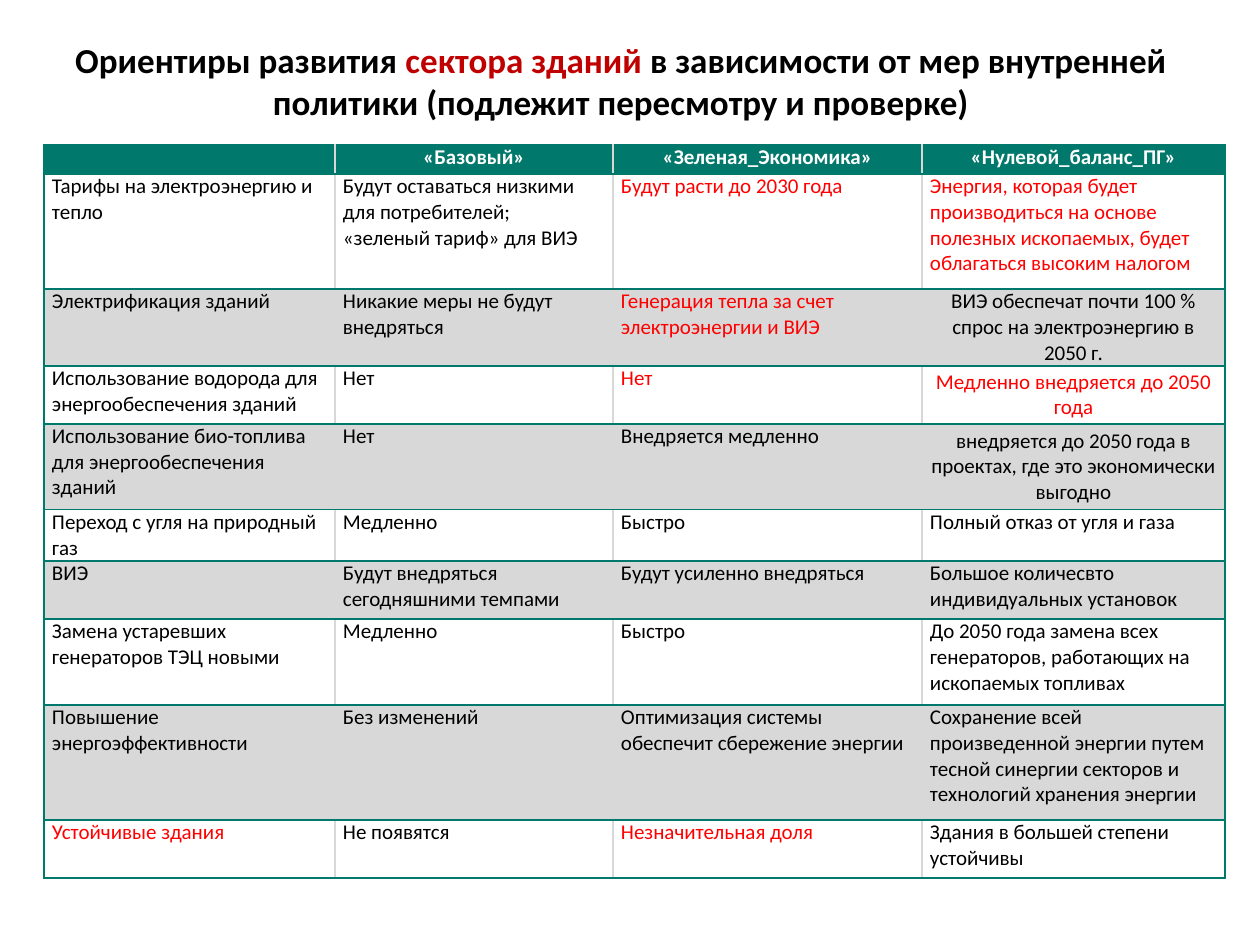
"""Build a slide comparing building-sector policy scenarios."""
from dataclasses import dataclass

from lxml import etree
from pptx import Presentation
from pptx import util as u
from pptx.dml.color import RGBColor
from pptx.enum import text
from pptx.oxml.ns import qn

PX = u.Inches(1) / 126


@dataclass(frozen=True)
class Theme:
    """Colours, font and type sizes of the slide."""
    font: str = "Calibri"
    title_size: int = 20
    table_size: int = 12
    ink: str = "000000"
    white: str = "FFFFFF"
    accent: str = "C00000"
    red: str = "FF0000"
    green: str = "00786B"
    grey: str = "D8D8D8"


THEME = Theme()


@dataclass(frozen=True)
class Entry:
    """Wording of a table cell with its colour and alignment."""
    wording: str
    color: str = THEME.ink
    centred: bool = False


def px(length):
    """Turn pixels into EMU."""
    return u.Emu(round(length * PX))


def write(frame, pieces, *, size, bold=False, centred=False, spacing=0, middle=False):
    """Fill a text frame with one paragraph of (wording, colour) pieces."""
    frame.word_wrap = True
    frame.vertical_anchor = text.MSO_ANCHOR.MIDDLE if middle else text.MSO_ANCHOR.TOP
    paragraph = frame.paragraphs[0]
    paragraph.alignment = text.PP_ALIGN.CENTER if centred else text.PP_ALIGN.LEFT
    paragraph.space_before = paragraph.space_after = u.Pt(spacing)
    for wording, color in pieces:
        for number, line in enumerate(wording.split("\n")):
            if number:
                paragraph.add_line_break()
            run = paragraph.add_run()
            run.text = line
            run.font.name = THEME.font
            run.font.size = u.Pt(size)
            run.font.bold = bold
            run.font.color.rgb = RGBColor.from_string(color)
    paragraph._p.get_or_add_endParaRPr().set("sz", str(size * 100))


class SlideBuilder:
    """Hold the theme and the current slide."""

    def __init__(self, slide, theme):
        """Keep the slide and its theme."""
        self.slide, self.theme = slide, theme

    def title(self, box, pieces):
        """Place and fill the title placeholder."""
        heading = self.slide.shapes.title
        heading.left, heading.top, heading.width, heading.height = map(px, box)
        write(heading.text_frame, pieces, size=self.theme.title_size,
              bold=True, centred=True, middle=True)
        heading.text_frame.auto_size = text.MSO_AUTO_SIZE.NONE

    def borders(self, cell, colors):
        """Draw the left, right, top and bottom borders of a cell."""
        properties = cell._tc.get_or_add_tcPr()
        for position, (side, color) in enumerate(zip("LRTB", colors)):
            line = etree.Element(qn(f"a:ln{side}"), w=str(u.Pt(1)))
            fill = etree.SubElement(line, qn("a:solidFill"))
            etree.SubElement(fill, qn("a:srgbClr"), val=color)
            properties.insert(position, line)

    def cell(self, cell, entry, *, header, fill, edges):
        """Fill and format one table cell."""
        cell.margin_left = cell.margin_right = px(8)
        cell.margin_top = cell.margin_bottom = 0
        pieces = [(entry.wording, entry.color)] if entry.wording else []
        write(cell.text_frame, pieces, size=self.theme.table_size, bold=header,
              centred=header or entry.centred, spacing=3)
        if entry.centred:
            cell.vertical_anchor = text.MSO_ANCHOR.MIDDLE
        if fill:
            cell.fill.solid()
            cell.fill.fore_color.rgb = RGBColor.from_string(fill)
        else:
            cell.fill.background()
        self.borders(cell, edges)

    def table(self, left, top, widths, heights, entries):
        """Add a table with a green header and grey bands."""
        theme = self.theme
        table = self.slide.shapes.add_table(
            len(heights), len(widths), px(left), px(top),
            px(sum(widths)), px(sum(heights))).table
        table.horz_banding = table.first_row = False
        for column, width in zip(table.columns, widths):
            column.width = px(width)
        for r, (height, row) in enumerate(zip(heights, entries)):
            table.rows[r].height = px(height)
            fill = theme.green if r == 0 else None if r % 2 else theme.grey
            for c, entry in enumerate(row):
                outer_left = theme.green if c == 0 else theme.grey
                outer_right = theme.green if c == len(widths) - 1 else theme.grey
                self.cell(table.cell(r, c), entry, header=r == 0, fill=fill,
                          edges=(outer_left, outer_right, theme.green, theme.green))


def plain(wording):
    """Make a black entry."""
    return Entry(wording)


def red(wording, centred=False):
    """Make a red entry."""
    return Entry(wording, THEME.red, centred)


def middle(wording):
    """Make a black centred entry."""
    return Entry(wording, centred=True)


TITLE = [
    ("Ориентиры развития ", THEME.ink),
    ("сектора зданий ", THEME.accent),
    ("в зависимости от мер внутренней политики (подлежит пересмотру и проверке)", THEME.ink),
]
SCENARIOS = [Entry(name, THEME.white) for name in
             ("", "«Базовый»", "«Зеленая_Экономика»", "«Нулевой_баланс_ПГ»")]
MEASURES = [
    [plain("Тарифы на электроэнергию и тепло"),
     plain("Будут оставаться низкими для потребителей;\n«зеленый тариф» для ВИЭ"),
     red("Будут расти до 2030 года"),
     red("Энергия, которая будет производиться на основе полезных ископаемых, "
         "будет облагаться высоким налогом")],
    [plain("Электрификация зданий"), plain("Никакие меры не будут внедряться"),
     red("Генерация тепла за счет электроэнергии и ВИЭ"),
     middle("ВИЭ обеспечат почти 100 % спрос на электроэнергию в 2050 г.")],
    [plain("Использование водорода для энергообеспечения зданий"), plain("Нет"),
     red("Нет"), red("Медленно внедряется до 2050 года", centred=True)],
    [plain("Использование био-топлива для энергообеспечения зданий"), plain("Нет"),
     plain("Внедряется медленно"),
     middle("внедряется до 2050 года в проектах, где это экономически выгодно")],
    [plain("Переход с угля на природный газ"), plain("Медленно"), plain("Быстро"),
     plain("Полный отказ от угля и газа")],
    [plain("ВИЭ"), plain("Будут внедряться сегодняшними темпами"),
     plain("Будут усиленно внедряться"),
     plain("Большое количесвто индивидуальных установок")],
    [plain("Замена устаревших генераторов ТЭЦ новыми"), plain("Медленно"), plain("Быстро"),
     plain("До 2050 года замена всех генераторов, работающих на ископаемых топливах")],
    [plain("Повышение энергоэффективности"), plain("Без изменений"),
     plain("Оптимизация системы обеспечит сбережение энергии"),
     plain("Сохранение всей произведенной энергии путем тесной синергии секторов "
           "и технологий хранения энергии")],
    [red("Устойчивые здания"), plain("Не появятся"), red("Незначительная доля"),
     plain("Здания в большей степени устойчивы")],
]


def main():
    """Build and save the presentation."""
    deck = Presentation()
    deck.slide_width, deck.slide_height = u.Inches(10), u.Inches(7.5)
    builder = SlideBuilder(deck.slides.add_slide(deck.slide_layouts[5]), THEME)
    builder.title((54, 27, 1134, 107), TITLE)
    builder.table(44, 145, (291, 278, 309, 303),
                  (29, 115, 58, 58, 86, 29, 58, 86, 115, 58), [SCENARIOS, *MEASURES])
    deck.save("out.pptx")


if __name__ == "__main__":
    main()
